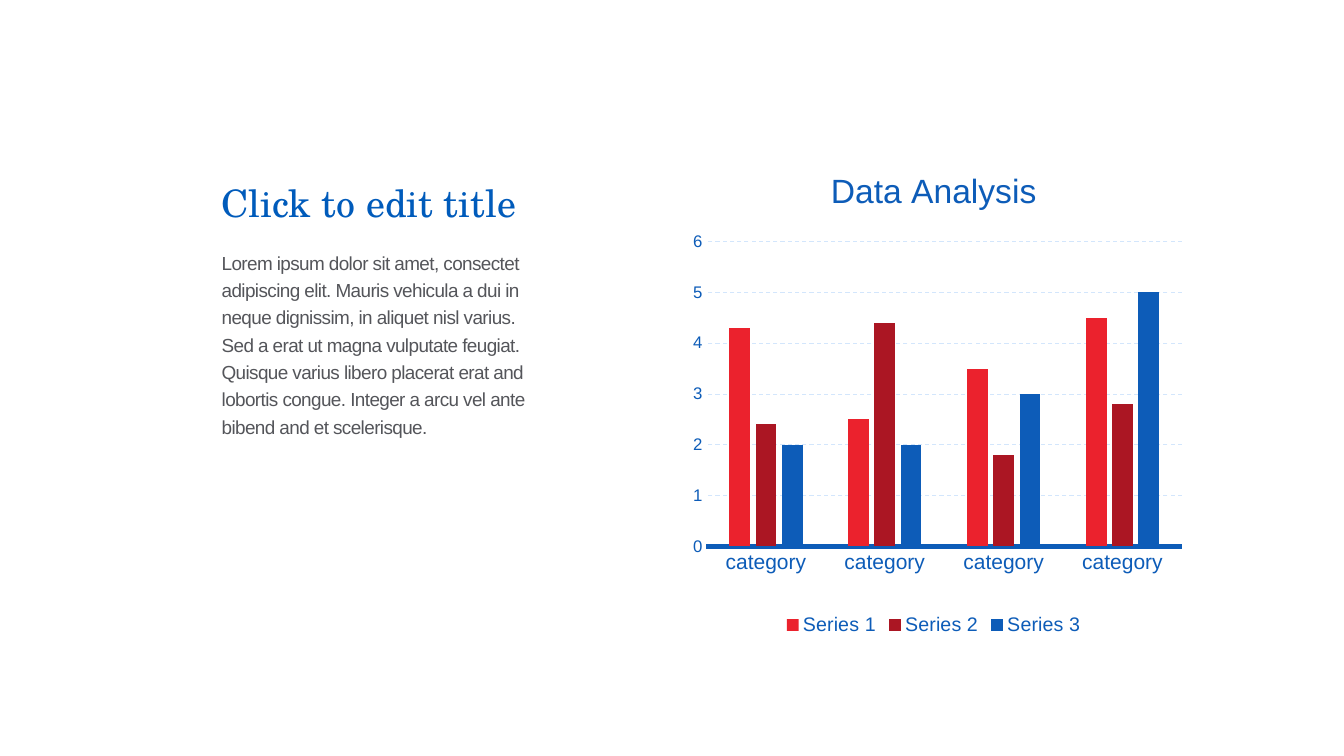
from lxml import etree
from pptx import Presentation
from pptx import util as u
from pptx.chart import data
from pptx.dml.color import RGBColor
from pptx.enum import chart as kinds, dml, text
from pptx.oxml import ns

PX = 9144
HUES = {"title": "005BBB", "body": "54555A", "blue": "0D5CB8",
        "red": "EB222D", "dark": "AB1623", "grid": "D3E6FC"}
SERIES = [("Series 1", (4.3, 2.5, 3.5, 4.5), "red"),
          ("Series 2", (2.4, 4.4, 1.8, 2.8), "dark"),
          ("Series 3", (2, 2, 3, 5), "blue")]
PLOT = {"layoutTarget": "inner", "xMode": "edge", "yMode": "edge",
        "x": 0.07, "y": 0.19, "w": 0.9, "h": 0.62}
BODY = ("Lorem ipsum dolor sit amet, consectet adipiscing elit. "
        "Mauris vehicula a dui in neque dignissim, in aliquet nisl varius. "
        "Sed a erat ut magna vulputate feugiat. "
        "Quisque varius libero placerat erat and lobortis congue. "
        "Integer a arcu vel ante bibend and et scelerisque.")


def hue(name):
    return RGBColor.from_string(HUES[name])


def style(font, size, color, face="Arial"):
    font.size = u.Pt(size)
    font.name = face
    font.bold = False
    font.color.rgb = hue(color)


def add_text(slide, box, words, size, color, face, lead, anchor, track=0):
    frame = slide.shapes.add_textbox(*(n * PX for n in box)).text_frame
    frame.word_wrap = True
    frame.vertical_anchor = anchor
    frame.text = words
    para = frame.paragraphs[0]
    para.line_spacing = lead
    run = para.runs[0]
    style(run.font, size, color, face)
    if track:
        run.font._element.set("spc", str(track))


def set_plot(chart):
    area = chart._chartSpace.chart.plotArea
    for old in area.findall(ns.qn("c:layout")):
        area.remove(old)
    layout = etree.Element(ns.qn("c:layout"))
    manual = etree.SubElement(layout, ns.qn("c:manualLayout"))
    for key, value in PLOT.items():
        etree.SubElement(manual, ns.qn("c:" + key)).set("val", str(value))
    area.insert(0, layout)


def set_axes(chart):
    cat, val = chart.category_axis, chart.value_axis
    for axis, size in ((cat, 15), (val, 12)):
        axis.major_tick_mark = kinds.XL_TICK_MARK.NONE
        axis.minor_tick_mark = kinds.XL_TICK_MARK.NONE
        style(axis.tick_labels.font, size, "blue")
    cat.format.line.color.rgb = hue("blue")
    cat.format.line.width = u.Pt(3.25)
    val.format.line.fill.background()
    val.minimum_scale, val.maximum_scale, val.major_unit = 0, 6, 1
    grid = val.major_gridlines.format.line
    grid.color.rgb = hue("grid")
    grid.width = u.Pt(0.75)
    grid.dash_style = dml.MSO_LINE.DASH


def add_bars(slide, box):
    table = data.CategoryChartData()
    table.categories = ["category"] * 4
    for name, values, _ in SERIES:
        table.add_series(name, values)
    chart = slide.shapes.add_chart(kinds.XL_CHART_TYPE.COLUMN_CLUSTERED,
                                   *(n * PX for n in box), table).chart
    style(chart.font, 10, "blue")
    title = chart.chart_title.text_frame
    title.text = "Data Analysis"
    style(title.paragraphs[0].runs[0].font, 24, "blue")
    chart.has_legend = True
    chart.legend.position = kinds.XL_LEGEND_POSITION.BOTTOM
    chart.legend.include_in_layout = False
    style(chart.legend.font, 14, "blue")
    plot = chart.plots[0]
    plot.gap_width = 219
    plot.overlap = -27
    plot.vary_by_categories = False
    for bars, (_, _, color) in zip(plot.series, SERIES):
        bars.format.fill.solid()
        bars.format.fill.fore_color.rgb = hue(color)
    set_axes(chart)
    set_plot(chart)


def main():
    deck = Presentation()
    deck.slide_width, deck.slide_height = 1333 * PX, 750 * PX
    slide = deck.slides.add_slide(deck.slide_layouts[6])
    add_bars(slide, (664, 147, 524, 488))
    add_text(slide, (210, 150, 350, 78), "Click to edit title", 27, "title",
             "TeX Gyre Schola", 0.8, text.MSO_ANCHOR.BOTTOM)
    add_text(slide, (210, 240, 328, 303), BODY, 13.5, "body", "Arial",
             u.Pt(19.5), text.MSO_ANCHOR.TOP, -40)
    deck.save("out.pptx")


if __name__ == "__main__":
    main()
